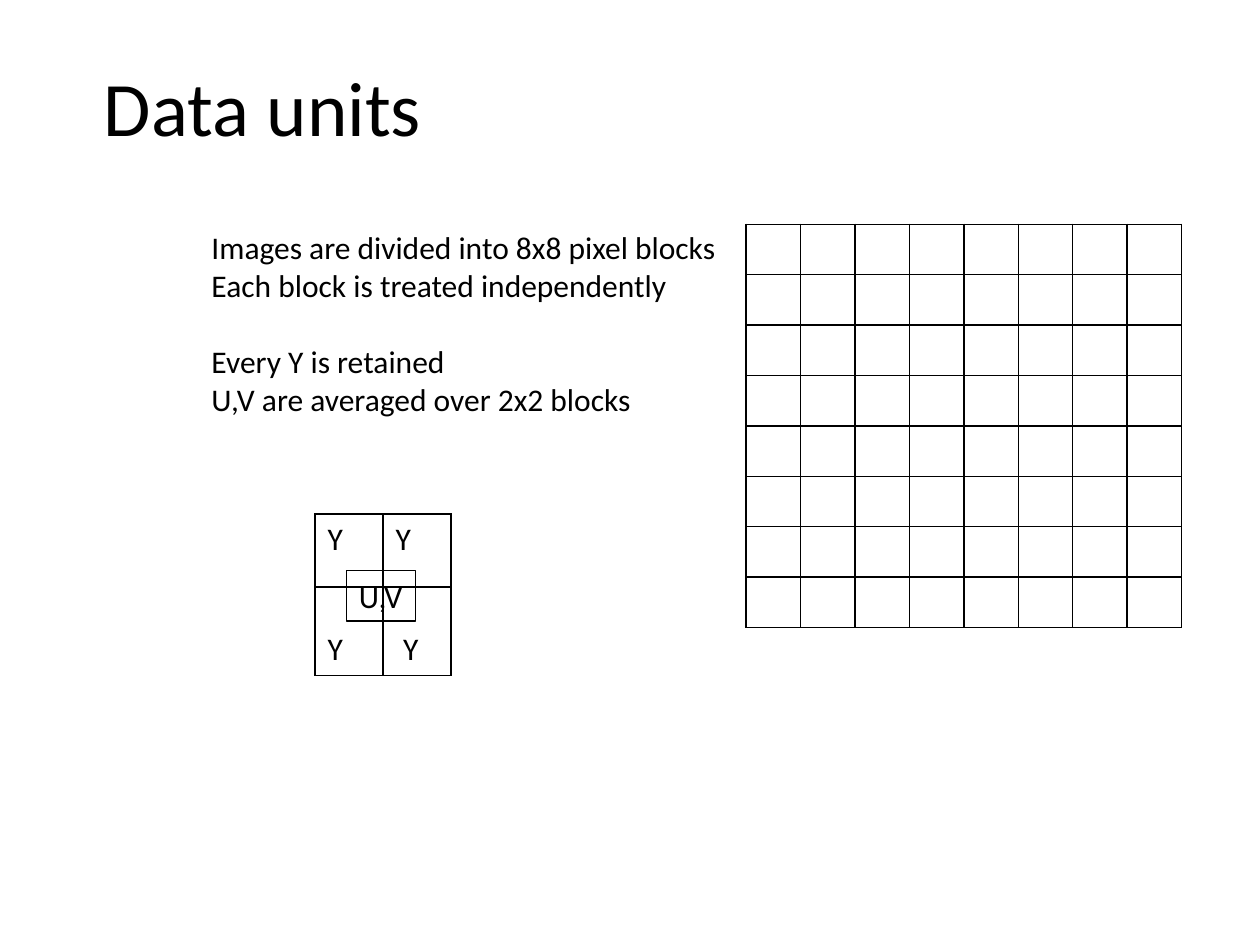
from lxml import etree
from pptx import Presentation
from pptx.dml.color import RGBColor
from pptx.enum.shapes import MSO_SHAPE
from pptx.enum.text import MSO_ANCHOR, MSO_AUTO_SIZE, PP_ALIGN
from pptx.oxml.ns import qn
from pptx.util import Inches, Pt

RECTANGLE = MSO_SHAPE.RECTANGLE
TOP, BOTTOM = MSO_ANCHOR.TOP, MSO_ANCHOR.BOTTOM
LEFT, CENTER = PP_ALIGN.LEFT, PP_ALIGN.CENTER
FIT_SHAPE = MSO_AUTO_SIZE.SHAPE_TO_FIT_TEXT

# Content
FONT, BLACK = "Calibri", "000000"
TITLE = "Data units"
BODY = [  # text, space before in points
    ("Images are divided into 8x8 pixel blocks", 0),
    ("Each block is treated independently", 0),
    ("Every Y is retained", 22),
    ("U,V are averaged over 2x2 blocks", 0),
]
PIXELS = [[""] * 8 for _ in range(8)]
LUMA = [["Y", "Y"], ["Y", "Y"]]
CHROMA = "U,V"


def color(value):
    return RGBColor.from_string(value)


def add_text(para, text, size=18):
    span = para.add_run()
    span.text = text
    span.font.name = FONT
    span.font.size = Pt(size)
    span.font.color.rgb = color(BLACK)


def fill_frame(frame, lines, size=18, align=LEFT):
    frame.word_wrap = False
    frame.auto_size = FIT_SHAPE
    for index, (text, gap) in enumerate(lines):
        para = frame.add_paragraph() if index else frame.paragraphs[0]
        para.alignment = align
        para.space_before = Pt(gap)
        add_text(para, text, size)


def add_borders(cell, width=1):
    properties = cell._tc.get_or_add_tcPr()
    for index, side in enumerate(("lnL", "lnR", "lnT", "lnB")):
        line = etree.Element(qn(f"a:{side}"), w=str(Pt(width)))
        fill = etree.SubElement(line, qn("a:solidFill"))
        etree.SubElement(fill, qn("a:srgbClr"), val=BLACK)
        properties.insert(index, line)


def add_grid(page, left, top, column_width, row_heights, texts):
    columns = len(texts[0])
    table = page.shapes.add_table(
        len(texts), columns, Inches(left), Inches(top),
        Inches(column_width * columns), Inches(sum(row_heights))).table
    table.first_row = table.horz_banding = False
    for column in table.columns:
        column.width = Inches(column_width)
    for row, height, values in zip(table.rows, row_heights, texts):
        row.height = Inches(height)
        for cell, text in zip(row.cells, values):
            cell.fill.background()
            add_borders(cell)
            if text:
                add_text(cell.text_frame.paragraphs[0], text)
            else:
                cell.margin_top = cell.margin_bottom = 0
    return table


deck = Presentation()
deck.slide_width, deck.slide_height = Inches(10), Inches(7.5)
page = deck.slides.add_slide(deck.slide_layouts[6])

# Body and title
for place, lines, size, align in (
    ((1.58, 1.76, 4.25, 1.62), BODY, 18, LEFT),
    ((0.71, 0.42, 2.75, 0.84), [(TITLE, 0)], 44, CENTER),
):
    box = page.shapes.add_textbox(*map(Inches, place))
    fill_frame(box.text_frame, lines, size, align)

# Pixel block, and the luma samples of one 2x2 block
add_grid(page, 5.92, 1.78, 3.46 / 8, [0.4] * 8, PIXELS)
luma = add_grid(page, 2.5, 4.08, 0.54, [0.58, 0.7], LUMA)
for cell in luma.rows[1].cells:
    cell.vertical_anchor = BOTTOM
luma.cell(1, 1).margin_left = Inches(0.16)

# Shared chroma sample
chroma = page.shapes.add_shape(
    RECTANGLE, *map(Inches, (2.75, 4.53, 0.55, 0.4)))
chroma.shadow.inherit = False
chroma.fill.background()
chroma.line.color.rgb = color(BLACK)
chroma.line.width = Pt(0.75)
chroma.text_frame.vertical_anchor = TOP
fill_frame(chroma.text_frame, [(CHROMA, 0)])

deck.save("out.pptx")
